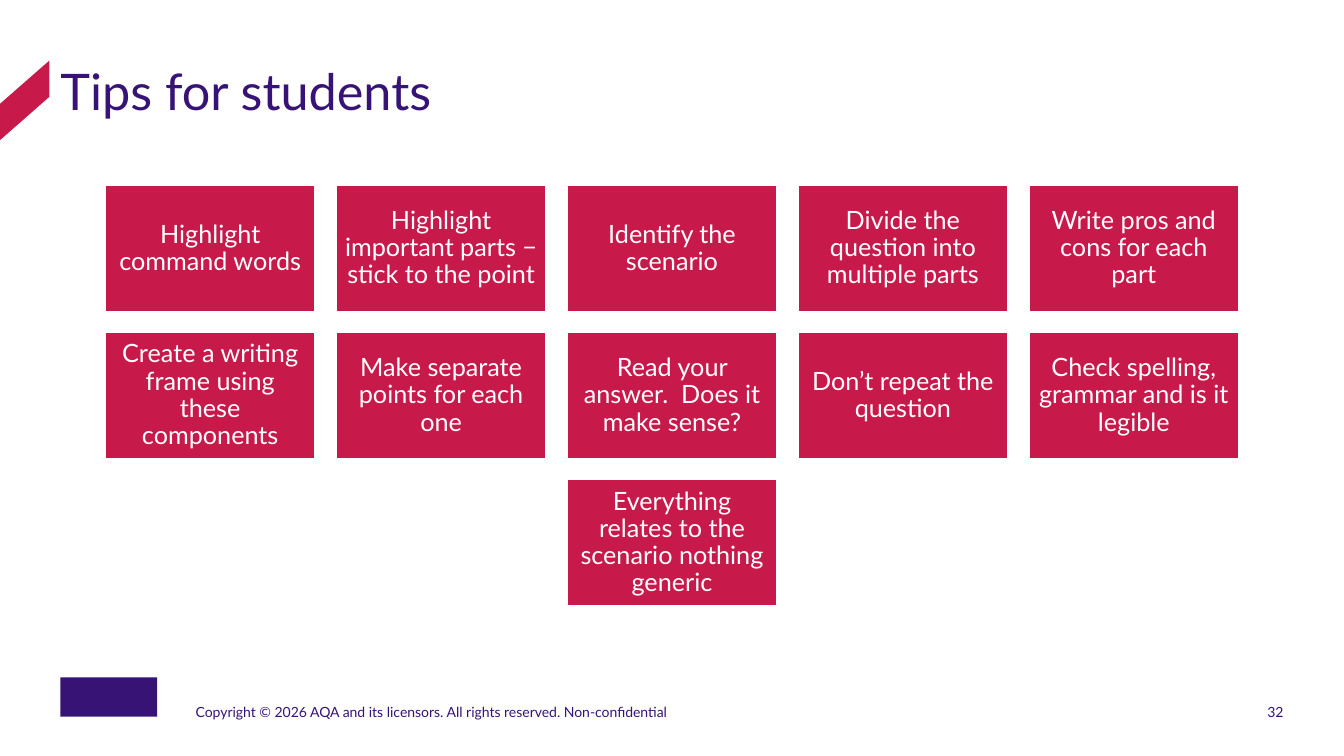
from pptx import Presentation
from pptx.dml.color import RGBColor
from pptx.enum.shapes import MSO_SHAPE
from pptx.enum.text import MSO_ANCHOR, PP_ALIGN
from pptx.util import Inches, Pt

THEME = {
    "font": "Lato",
    "purple": RGBColor.from_string("371376"),
    "crimson": RGBColor.from_string("C8194B"),
    "white": RGBColor.from_string("FFFFFF"),
    "title_size": Pt(36),
    "tip_size": Pt(18),
    "footer_size": Pt(10),
}

presentation = Presentation()
presentation.slide_width = Inches(13.33)
presentation.slide_height = Inches(7.5)
slide = presentation.slides.add_slide(presentation.slide_layouts[6])


def write(holder, text, size, color=THEME["purple"], align=PP_ALIGN.LEFT,
          anchor=MSO_ANCHOR.TOP, inset=0, line_spacing=1.0):
    frame = holder.text_frame
    frame.word_wrap = True
    frame.vertical_anchor = anchor
    frame.margin_left = frame.margin_right = Inches(inset)
    frame.margin_top = frame.margin_bottom = Inches(inset)
    paragraph = frame.paragraphs[0]
    paragraph.alignment = align
    paragraph.line_spacing = line_spacing
    run = paragraph.add_run()
    run.text = text
    run.font.name = THEME["font"]
    run.font.size = size
    run.font.color.rgb = color


def paint(shape, fill):
    shape.shadow.inherit = False
    shape.fill.solid()
    shape.fill.fore_color.rgb = fill
    shape.line.fill.background()


# Page margins
margin = Inches(0.6)
content_width = presentation.slide_width - 2 * margin
content_right = margin + content_width

# Slanted ribbon at the left edge
ribbon_width, ribbon_depth = Inches(0.49), Inches(0.36)
ribbon_top, ribbon_fall = margin, Inches(0.43)
outline = slide.shapes.build_freeform(ribbon_width, ribbon_top)
outline.add_line_segments([
    (ribbon_width, ribbon_top + ribbon_depth),
    (0, ribbon_top + ribbon_fall + ribbon_depth),
    (0, ribbon_top + ribbon_fall),
])
ribbon = outline.convert_to_shape()
paint(ribbon, THEME["crimson"])

# Title
title = slide.shapes.add_textbox(margin, margin, content_width, Inches(1.23))
write(title, "Tips for students", THEME["title_size"])

# Tips: rows of tiles, each row centred on the slide
tip_rows = [
    ["Highlight command words",
     "Highlight important parts − stick to the point",
     "Identify the scenario",
     "Divide the question into multiple parts",
     "Write pros and cons for each part"],
    ["Create a writing frame using these components",
     "Make separate points for each one",
     "Read your answer.  Does it make sense?",
     "Don’t repeat the question",
     "Check spelling, grammar and is it legible"],
    ["Everything relates to the scenario nothing generic"],
]
tile_width, tile_height, gap = Inches(2.08), Inches(1.25), Inches(0.21)
tips_top = Inches(1.84)

for row, tips in enumerate(tip_rows):
    row_width = len(tips) * (tile_width + gap) - gap
    row_left = (presentation.slide_width - row_width) // 2
    for column, tip in enumerate(tips):
        tile = slide.shapes.add_shape(
            MSO_SHAPE.RECTANGLE,
            row_left + column * (tile_width + gap),
            tips_top + row * (tile_height + gap),
            tile_width, tile_height)
        paint(tile, THEME["crimson"])
        tile.line.color.rgb = THEME["white"]
        tile.line.width = Pt(1)
        write(tile, tip, THEME["tip_size"], color=THEME["white"],
              align=PP_ALIGN.CENTER, anchor=MSO_ANCHOR.MIDDLE,
              inset=0.07, line_spacing=0.9)

# Footer: plain badge, copyright line and page number
badge = slide.shapes.add_shape(
    MSO_SHAPE.RECTANGLE, margin, Inches(6.72), Inches(0.96), Inches(0.39))
paint(badge, THEME["purple"])

footer_top, footer_height = Inches(6.75), Inches(0.4)
number_width = Inches(0.94)
copyright_line = slide.shapes.add_textbox(
    Inches(1.94), footer_top, Inches(7.92), footer_height)
write(copyright_line,
      "Copyright © 2026 AQA and its licensors. All rights reserved. Non-confidential",
      THEME["footer_size"], anchor=MSO_ANCHOR.BOTTOM)
page_number = slide.shapes.add_textbox(
    content_right - number_width, footer_top, number_width, footer_height)
write(page_number, "32", THEME["footer_size"],
      align=PP_ALIGN.RIGHT, anchor=MSO_ANCHOR.BOTTOM)

presentation.save("out.pptx")
